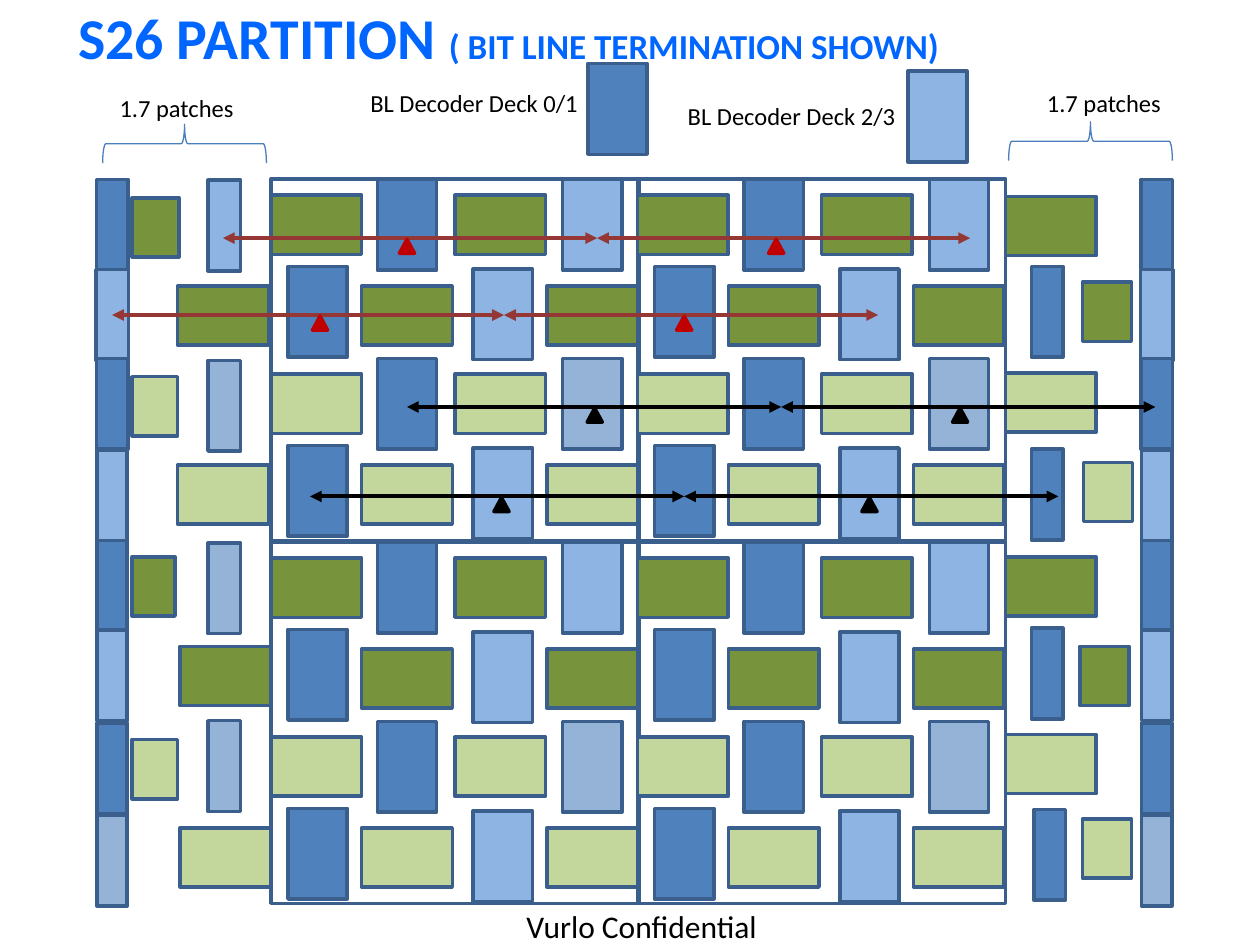
from pptx import Presentation
from pptx import util as u
from pptx.dml.color import RGBColor
from pptx.enum import shapes, text
from pptx.oxml.ns import qn
from lxml import etree

PX = 9144  # 100 px to the inch
FONT = "Calibri"

TITLE_BLUE = RGBColor(0x00, 0x66, 0xFF)
BLACK = RGBColor(0x00, 0x00, 0x00)
OUTLINE = RGBColor(0x3A, 0x5F, 0x8C)
BRACE = RGBColor(0x4B, 0x7E, 0xBC)
DECK_01 = RGBColor(0x4F, 0x81, 0xBD)
DECK_23 = RGBColor(0x8E, 0xB4, 0xE3)
DECK_23_DIM = RGBColor(0x95, 0xB3, 0xD7)
GREEN = RGBColor(0x77, 0x93, 0x3C)
PALE_GREEN = RGBColor(0xC3, 0xD6, 0x9B)
RED = RGBColor(0xC0, 0x00, 0x00)
DARK_RED = RGBColor(0x95, 0x37, 0x35)

TILE_W, TILE_H = 72, 47


class Floorplan:
    """Draws the partition's elements on one slide in one style."""

    def __init__(self, slide):
        self.slide = slide

    def shape(self, kind, box, fill=None, line=OUTLINE, weight=2, turn=0):
        item = self.slide.shapes.add_shape(kind, *(v * PX for v in box))
        item.shadow.inherit = False
        item.rotation = turn
        if fill is None:
            item.fill.background()
        else:
            item.fill.solid()
            item.fill.fore_color.rgb = fill
        item.line.color.rgb = line
        item.line.width = u.Pt(weight)

    def patch(self, left, top, fill, width=TILE_W):
        self.shape(shapes.MSO_SHAPE.RECTANGLE, (left, top, width, TILE_H), fill)

    def decoder(self, left, top, fill, thickness=TILE_H):
        self.shape(shapes.MSO_SHAPE.RECTANGLE,
                   (left, top, TILE_W, thickness), fill, turn=90)

    def frame(self, left, top, width, height):
        self.shape(shapes.MSO_SHAPE.RECTANGLE, (left, top, width, height))

    def brace(self, left, top):
        self.shape(shapes.MSO_SHAPE.RIGHT_BRACE, (left, top, 31, 130),
                   line=BRACE, weight=0.75, turn=270)

    def marker(self, left, top, color):
        self.shape(shapes.MSO_SHAPE.ISOSCELES_TRIANGLE,
                   (left, top, 12, 11), color, color)

    def bit_line(self, start, end, y, color):
        arrow = self.slide.shapes.add_connector(
            shapes.MSO_CONNECTOR.STRAIGHT, start * PX, y * PX, end * PX, y * PX)
        arrow.line.color.rgb = color
        arrow.line.width = u.Pt(2.25)
        properties = arrow._element.spPr
        line_xml = properties.find(qn("a:ln"))
        for end_tag in ("a:headEnd", "a:tailEnd"):
            etree.SubElement(line_xml, qn(end_tag), type="triangle")
        etree.SubElement(properties, qn("a:effectLst"))

    def label(self, words, left, top, width, height=34, size=14):
        box = self.slide.shapes.add_textbox(
            left * PX, top * PX, width * PX, height * PX)
        box.text_frame.word_wrap = True
        paragraph = box.text_frame.paragraphs[0]
        paragraph.text = words
        paragraph.font.size = u.Pt(size)
        paragraph.font.name = FONT
        paragraph.font.color.rgb = BLACK

    def title(self, parts, left, top, width, height):
        holder = self.slide.shapes.title
        holder.left, holder.top = left * PX, top * PX
        holder.width, holder.height = width * PX, height * PX
        holder.text_frame.auto_size = text.MSO_AUTO_SIZE.NONE
        paragraph = holder.text_frame.paragraphs[0]
        paragraph.alignment = text.PP_ALIGN.LEFT
        paragraph.font.name = FONT
        paragraph.font.bold = True
        paragraph.font.color.rgb = TITLE_BLUE
        for words, size in parts:
            run = paragraph.add_run()
            run.text = words
            run.font.size = u.Pt(size)


def draw_quadrant(plan, left, top):
    # Rows alternate: patch first, then decoder first
    for y, green, last_deck in ((13, GREEN, DECK_23), (155, PALE_GREEN, DECK_23_DIM)):
        plan.patch(left, top + y, green)
        plan.decoder(left + 72, top + y, DECK_01)
        plan.patch(left + 146, top + y, green)
        plan.decoder(left + 219, top + y, last_deck)
    for y, green in ((85, GREEN), (227, PALE_GREEN)):
        plan.decoder(left + 1, top + y - 3, DECK_01)
        plan.patch(left + 72, top + y, green)
        plan.decoder(left + 148, top + y - 1, DECK_23)
        plan.patch(left + 219, top + y, green)
    plan.frame(left, top, 292, 287)


def draw_margins(plan):
    greens = (GREEN, PALE_GREEN) * 2

    # Left margin: narrow decoders, full patches, cut patches
    for y, deck in zip((166, 309, 454, 595), (DECK_23,) + (DECK_23_DIM,) * 3):
        plan.decoder(142, y, deck, 26)
    for x, y, green in zip((141, 141, 143, 143), (227, 369, 513, 657), greens):
        plan.patch(x, y, green)
    for y, width, green in zip((157, 299, 442, 587), (37, 36, 34, 36), greens):
        plan.patch(105, y, green, width)

    # Right margin: the same three kinds
    for x, y in zip((795, 795, 795, 797), (235, 380, 522, 666)):
        plan.decoder(x, y, DECK_01, 25)
    for y, green in zip((156, 296, 442, 583), greens):
        plan.patch(798, y, green)
    for x, y, green in zip((859, 860, 857, 859), (224, 367, 513, 650), greens):
        plan.patch(x, y, green, 39)

    # Outer decoder columns
    decks = (DECK_01, DECK_23) * 3 + (DECK_01, DECK_23_DIM)
    tops = (166, 237, 308, 381, 453, 524, 598, 671)
    thicknesses = (25, 26, 25, 24, 24, 24, 24, 24)
    for x in (53, 882):
        for y, deck, thickness in zip(tops, decks, thicknesses):
            plan.decoder(x, y, deck, thickness)


def main():
    deck = Presentation()
    deck.slide_width, deck.slide_height = 1000 * PX, 750 * PX
    plan = Floorplan(deck.slides.add_slide(deck.slide_layouts[5]))

    plan.title((("S26 PARTITION ", 33), ("( BIT LINE TERMINATION SHOWN)", 20)),
               52, -4, 973, 66)
    plan.label("Vurlo Confidential", 408, 715, 261, 40, 18)

    # Patch and decoder grid
    for top in (142, 430):
        for left in (215, 506):
            draw_quadrant(plan, left, top)
    draw_margins(plan)

    # Bit lines: y, colours, three arrow ends, two marker lefts
    bit_lines = (
        (189, DARK_RED, RED, (177, 474, 770), (317, 610)),
        (250, DARK_RED, RED, (89, 400, 697), (248, 537)),
        (323, BLACK, BLACK, (323, 620, 917), (466, 756)),
        (394, BLACK, BLACK, (246, 543, 840), (392, 684)),
    )
    for y, line_color, marker_color, stops, markers in bit_lines:
        for start, end in zip(stops, stops[1:]):
            plan.bit_line(start, end, y, line_color)
        for x in markers:
            plan.marker(x, y + 1, marker_color)

    # Legend
    plan.decoder(454, 63, DECK_01)
    plan.decoder(708, 69, DECK_23)
    plan.label("BL Decoder Deck 0/1", 284, 65, 202)
    plan.label("BL Decoder Deck 2/3", 536, 75, 191)

    # Margin widths
    for brace_x, brace_y, label_x, label_y in ((850, 47, 821, 65), (131, 49, 85, 69)):
        plan.brace(brace_x, brace_y)
        plan.label("1.7 patches", label_x, label_y, 138)

    deck.save("out.pptx")


if __name__ == "__main__":
    main()
